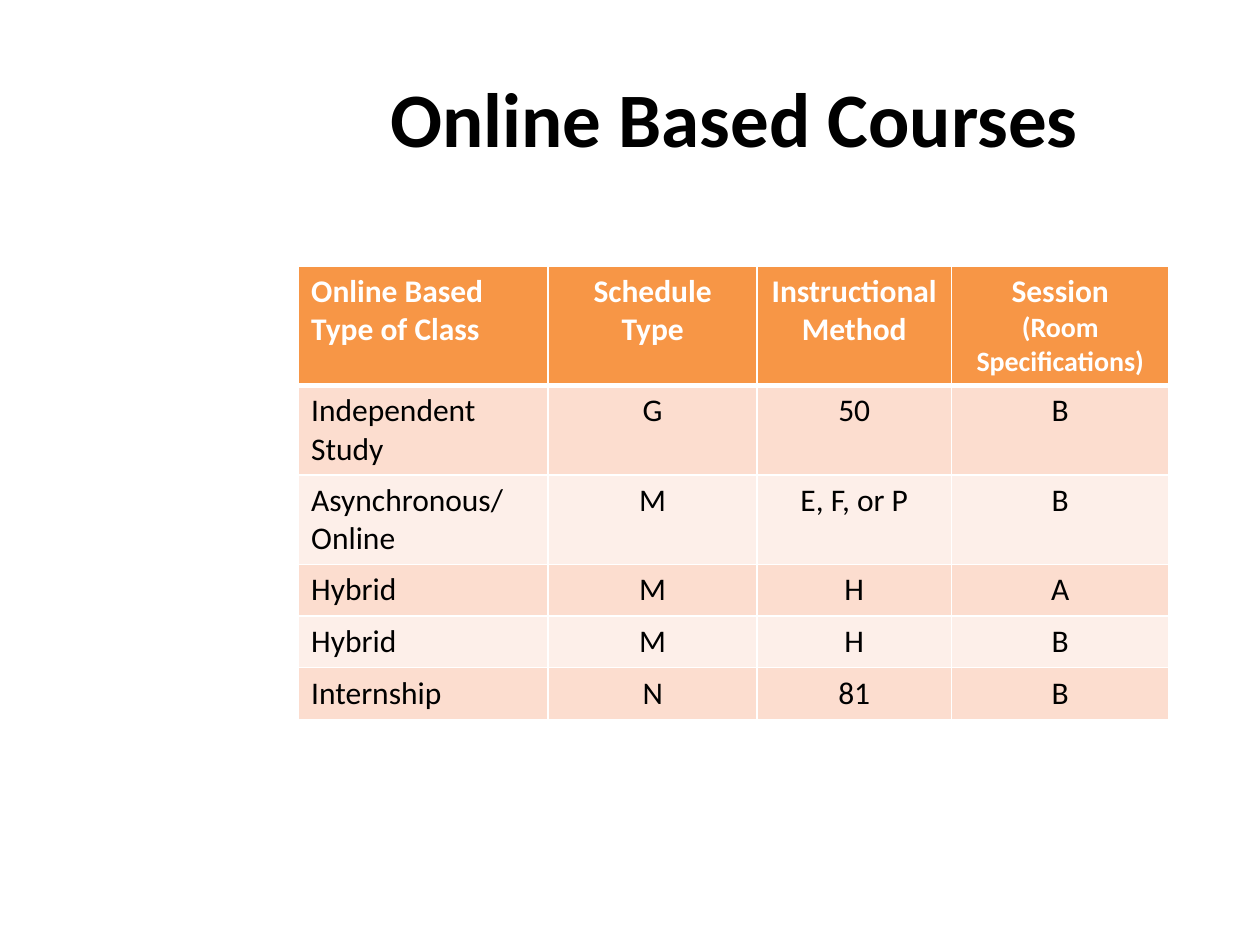
from dataclasses import dataclass

import pptx
import pptx.dml.color
import pptx.enum.text
import pptx.oxml
import pptx.oxml.ns
import pptx.util

Inches = pptx.util.Inches
Pt = pptx.util.Pt
Align = pptx.enum.text.PP_ALIGN
Anchor = pptx.enum.text.MSO_ANCHOR


@dataclass(frozen=True)
class Theme:
    font: str = "Calibri"
    black: str = "000000"
    white: str = "FFFFFF"
    header_fill: str = "F79646"
    band_fills: tuple = ("FCDDCF", "FDEFE9")
    title_size: int = 44
    table_size: int = 18
    note_size: int = 16
    thin_border: int = 1
    thick_border: int = 3


THEME = Theme()

COLUMN_WIDTHS = (1.98, 1.66, 1.54, 1.73)
ROW_HEIGHTS = (0.94, 0.71, 0.71, 0.41, 0.41, 0.41)
COURSES = (
    ("Online Based\nType of Class", "Schedule Type", "Instructional Method",
     "Session\v(Room Specifications)"),
    ("Independent Study", "G", "50", "B"),
    ("Asynchronous/Online", "M", "E, F, or P", "B"),
    ("Hybrid", "M", "H", "A"),
    ("Hybrid", "M", "H", "B"),
    ("Internship", "N", "81", "B"),
)


def rgb(value):
    return pptx.dml.color.RGBColor.from_string(value)


def format_text(text_frame, size, color, bold, alignment):
    for paragraph in text_frame.paragraphs:
        paragraph.alignment = alignment
        for run in paragraph.runs:
            run.font.name = THEME.font
            run.font.size = Pt(size)
            run.font.bold = bold
            run.font.color.rgb = rgb(color)


def add_title(slide, text):
    title = slide.shapes.title
    title.left, title.top = Inches(2.16), Inches(0.3)
    title.width, title.height = Inches(7.34), Inches(1.25)
    title.text_frame.text = text
    title.text_frame.vertical_anchor = Anchor.MIDDLE
    format_text(title.text_frame, THEME.title_size, THEME.black, True, Align.CENTER)


def set_borders(cell, top, bottom):
    properties = cell._tc.get_or_add_tcPr()
    widths = {"L": THEME.thin_border, "R": THEME.thin_border, "T": top, "B": bottom}
    for side, width in widths.items():
        properties.append(pptx.oxml.parse_xml(
            f'<a:ln{side} {pptx.oxml.ns.nsdecls("a")} w="{Pt(width)}">'
            f'<a:solidFill><a:srgbClr val="{THEME.white}"/></a:solidFill>'
            f'</a:ln{side}>'))


def fill_cell(cell, text, row, column):
    is_header = row == 0
    set_borders(
        cell,
        top=THEME.thick_border if row == 1 else THEME.thin_border,
        bottom=THEME.thick_border if is_header else THEME.thin_border)
    cell.fill.solid()
    cell.fill.fore_color.rgb = rgb(
        THEME.header_fill if is_header else THEME.band_fills[(row - 1) % 2])
    cell.text_frame.text = text
    format_text(
        cell.text_frame, THEME.table_size,
        THEME.white if is_header else THEME.black, is_header,
        Align.LEFT if column == 0 else Align.CENTER)


def add_course_table(slide):
    table = slide.shapes.add_table(
        len(COURSES), len(COLUMN_WIDTHS), Inches(2.37), Inches(2.11),
        Inches(sum(COLUMN_WIDTHS)), Inches(sum(ROW_HEIGHTS))).table
    for column, width in zip(table.columns, COLUMN_WIDTHS):
        column.width = Inches(width)
    for row, height in zip(table.rows, ROW_HEIGHTS):
        row.height = Inches(height)
    for row, values in enumerate(COURSES):
        for column, text in enumerate(values):
            fill_cell(table.cell(row, column), text, row, column)
    session_header = table.cell(0, len(COLUMN_WIDTHS) - 1)
    room_note = session_header.text_frame.paragraphs[0].runs[-1]
    room_note.font.size = Pt(THEME.note_size)


def main():
    presentation = pptx.Presentation()
    presentation.slide_width = Inches(10)
    presentation.slide_height = Inches(7.5)
    slide = presentation.slides.add_slide(presentation.slide_layouts[5])
    add_title(slide, "Online Based Courses")
    add_course_table(slide)
    presentation.save("out.pptx")


if __name__ == "__main__":
    main()
